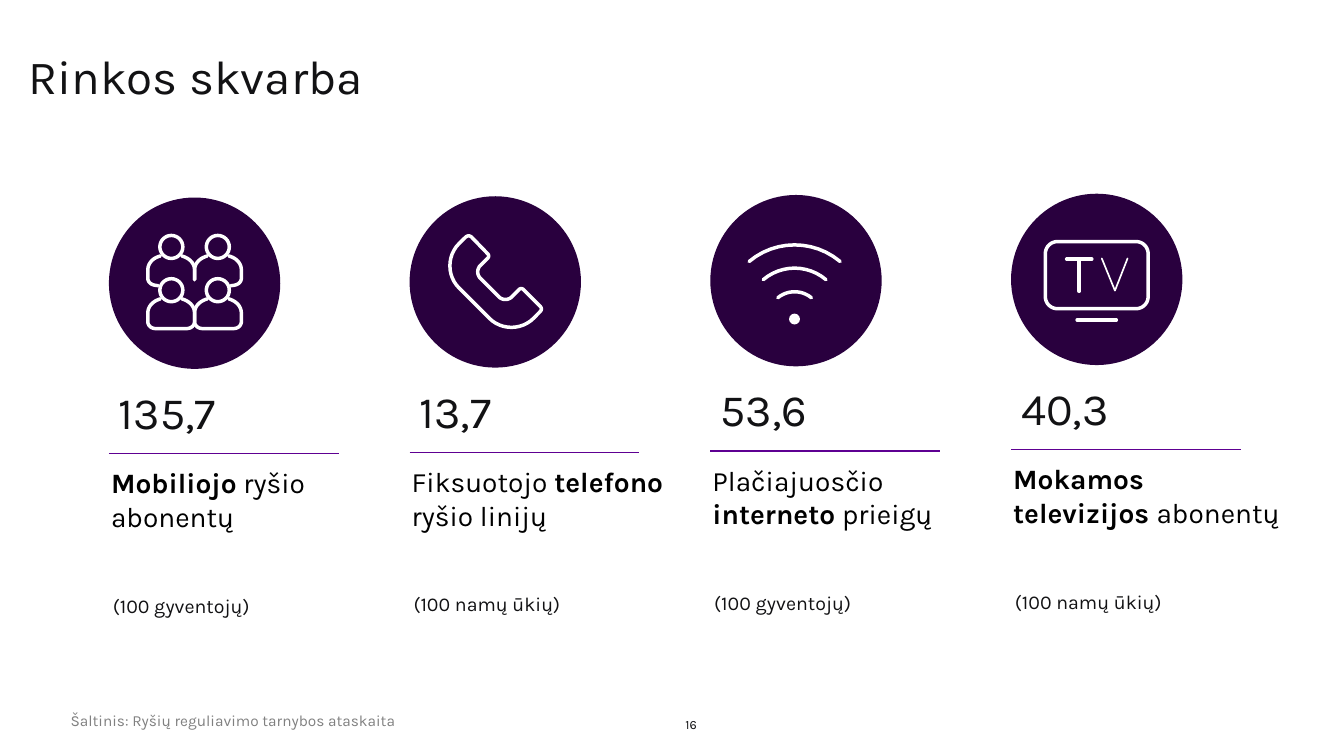
from math import cos, pi, sin

from pptx import Presentation
from pptx.dml.color import RGBColor
from pptx.enum.shapes import MSO_CONNECTOR, MSO_SHAPE
from pptx.enum.text import MSO_ANCHOR
from pptx.oxml.ns import qn
from pptx.oxml.xmlchemy import OxmlElement
from pptx.util import Pt

OVAL = MSO_SHAPE.OVAL
STRAIGHT = MSO_CONNECTOR.STRAIGHT
TOP, BOTTOM = MSO_ANCHOR.TOP, MSO_ANCHOR.BOTTOM

FONT = "Karla"
INK, BLACK, GREY, WHITE = "121214", "000000", "808080", "FFFFFF"
DISC, RULE = "29003E", "5E0092"

TITLE = "Rinkos skvarba"
SOURCE = "Šaltinis: Ryšių reguliavimo tarnybos ataskaita"
PAGE = "16"


def ring(x, y, radius):
    angles = [2 * pi * step / 32 for step in range(33)]
    return [(x + radius * cos(a), y + radius * sin(a)) for a in angles]


def mirrored(stroke):
    return [tuple(-v if i % 2 == 0 else v for i, v in enumerate(leg)) for leg in stroke]


FRONT_BODY = [(-24.5, 11.2), (-30, 13, -33.4, 16.5, -33.4, 21.6), (-33.4, 27.4),
              (-33.4, 30.2, -31, 32.4, -28, 32.4), (-5.5, 32.4),
              (-2.5, 32.4, 0, 30.2, 0, 27.4), (0, 21.6), (0, 16.5, -3.4, 13, -9, 11.2)]
BACK_OUTER = [(-24.5, -19.4), (-30, -18, -33.4, -14, -33.4, -9.4), (-33.4, -3.6),
              (-33.4, -0.8, -31, 1.7, -26, 1.7)]
BACK_INNER = [(-9, -19.4), (-3.4, -17.8, 0, -14, 0, -9.4), (0, -2.5)]
BODIES = [FRONT_BODY, BACK_OUTER, BACK_INNER]
HEADS = [ring(x, y, 8.2) for x in (-16.6, 16.6) for y in (-25.9, 5)]
PEOPLE = HEADS + BODIES + [mirrored(body) for body in BODIES]

HANDSET = [(-21.2, -32), (-19.8, -33.2, -18.2, -33.2, -16.9, -32), (-5.8, -20.5),
           (-4.4, -19.2, -4.4, -17.8, -5.8, -16.6), (-11.2, -11.2),
           (-13, -8.6, -13, -5.8, -11.2, -3.2), (3.2, 11.2),
           (5.8, 13, 8.6, 13, 11.2, 11.2), (16.6, 5.8),
           (17.8, 4.4, 19.2, 4.4, 20.5, 5.8), (32, 17.3),
           (33.2, 18.6, 33.2, 20, 32, 21.2), (27.4, 25.9),
           (18.7, 34.6, 4.3, 34.6, -4.3, 25.9), (-25.9, 4.3),
           (-34.6, -4.3, -34.6, -18.7, -25.9, -27.4), (-21.2, -32)]

WAVES = [[(-33.5, -13.7), (-14.6, -29.5, 12.6, -29.5, 31.5, -13.7)],
         [(-23.4, -0.7), (-10.5, -11.7, 8.5, -11.7, 21.4, -0.7)],
         [(-13, 12.2), (-6, 6.5, 4, 6.5, 11, 12.2)]]
WAVE_DOT = (-1.1, 27.4, 3.9)

SCREEN = [(-28, -27), (28, -27), (33, -27, 36.7, -23, 36.7, -18.5), (36.7, 12.4),
          (36.7, 17, 33, 20.9, 28, 20.9), (-28, 20.9),
          (-33, 20.9, -36.7, 17, -36.7, 12.4), (-36.7, -18.5),
          (-36.7, -23, -33, -27, -28, -27)]
STAND = [(-14, 29), (14, 29)]
LETTER_T = [[(-21.5, -14.4), (-3.5, -14.4)], [(-12.6, -14.4), (-12.6, 8.5)]]
LETTER_V = [(3.6, -15), (13, 8), (22, -15)]

MARKETS = [
    ("135,7", [("Mobiliojo", True), (" ryšio abonentų", False)],
     "(100 gyventojų)", 229, [(2.5, PEOPLE)], None),
    ("13,7", [("Fiksuotojo ", False), ("telefono ", True), ("ryšio linijų", False)],
     "(100 namų ūkių)", 191.5, [(2.5, [HANDSET])], None),
    ("53,6", [("Plačiajuosčio ", False), ("\n", False), ("interneto", True),
              (" prieigų", False)],
     "(100 gyventojų)", 229, [(2.5, WAVES)], WAVE_DOT),
    ("40,3", [("Mokamos televizijos ", True), ("abonentų", False)],
     "(100 namų ūkių)", 206, [(2.5, [SCREEN, STAND] + LETTER_T), (1.2, [LETTER_V])], None),
]

FIRST_LEFT, FIRST_TOP = 77.8, 141.1
COLUMN_STEP, RISE = 214.8, 0.9
DIAMETER, RULE_LENGTH = 122.4, 164

deck = Presentation()
deck.slide_width, deck.slide_height = Pt(960), Pt(540)
slide = deck.slides.add_slide(deck.slide_layouts[6])
shapes = slide.shapes


def color(value):
    return RGBColor.from_string(value)


def write(box, runs, size, ink, insets=(0, 0), anchor=TOP, spacing=None):
    frame = shapes.add_textbox(*map(Pt, box)).text_frame
    frame.word_wrap = True
    frame.vertical_anchor = anchor
    frame.margin_left = frame.margin_right = Pt(insets[0])
    frame.margin_top = frame.margin_bottom = Pt(insets[1])
    paragraph = frame.paragraphs[0]
    paragraph.font.name = FONT
    paragraph.font.size = Pt(size)
    paragraph.font.color.rgb = color(ink)
    if spacing:
        paragraph.line_spacing = spacing
    for words, bold in runs:
        if words == "\n":
            paragraph.add_line_break()
            continue
        run = paragraph.add_run()
        run.text = words
        if bold:
            run.font.bold = True


def disc(x, y, radius, fill):
    oval = shapes.add_shape(OVAL, Pt(x - radius), Pt(y - radius), Pt(2 * radius), Pt(2 * radius))
    oval.shadow.inherit = False
    oval.fill.solid()
    oval.fill.fore_color.rgb = color(fill)
    oval.line.fill.background()


def trace(stroke, x, y):
    points = [stroke[0]]
    for leg in stroke[1:]:
        if len(leg) == 2:
            points.append(leg)
            continue
        knots = (points[-1], leg[:2], leg[2:4], leg[4:])
        for t in [step / 12 for step in range(1, 13)]:
            weights = ((1 - t) ** 3, 3 * t * (1 - t) ** 2, 3 * t * t * (1 - t), t ** 3)
            points.append(tuple(sum(w * k[axis] for w, k in zip(weights, knots))
                                for axis in (0, 1)))
    return [(Pt(x + px), Pt(y + py)) for px, py in points]


def draw_icon(strokes, width, x, y):
    traces = [trace(stroke, x, y) for stroke in strokes]
    builder = shapes.build_freeform(*traces[0][0], scale=1.0)
    for number, points in enumerate(traces):
        if number:
            builder.move_to(*points[0])
        builder.add_line_segments(points[1:], close=points[0] == points[-1])
    icon = builder.convert_to_shape()
    icon.shadow.inherit = False
    icon.fill.background()
    icon.line.color.rgb = color(WHITE)
    icon.line.width = Pt(width)
    icon.element.spPr.find(qn("a:ln")).set("cap", "rnd")


def draw_rule(left, top):
    rule = shapes.add_connector(STRAIGHT, Pt(left), Pt(top), Pt(left + RULE_LENGTH), Pt(top))
    rule.line.color.rgb = color(RULE)
    rule.line.width = Pt(1)
    rule._element.spPr.append(OxmlElement("a:effectLst"))


write((20.2, 39.6, 919.4, 72.7), [(TITLE, False)], 34, INK, spacing=0.86)
write((489.6, 505.4, 58.3, 17.3), [(PAGE, False)], 9, INK, anchor=BOTTOM)
write((50.4, 507.6, 366.5, 13.7), [(SOURCE, False)], 11, GREY)

for column, (value, label, base, label_width, icon_parts, dot) in enumerate(MARKETS):
    left = FIRST_LEFT + column * COLUMN_STEP
    top = FIRST_TOP - column * RISE
    center_x, center_y = left + DIAMETER / 2, top + DIAMETER / 2
    disc(center_x, center_y, DIAMETER / 2, DISC)
    for width, strokes in icon_parts:
        draw_icon(strokes, width, center_x, center_y)
    if dot:
        disc(center_x + dot[0], center_y + dot[1], dot[2], WHITE)
    write((left + 4.3, top + 156.3, 203, 18.7), [(value, False)], 32, INK, (2.9, 2.9), BOTTOM)
    draw_rule(left, top + 182.9)
    write((left - 4.3, top + 188.7, label_width, 59), label, 20, BLACK, (5.8, 2.9))
    write((left - 4.3, top + 279.4, 215, 24.5), [(base, False)], 14, INK, (7.2, 3.6))

deck.save("out.pptx")
